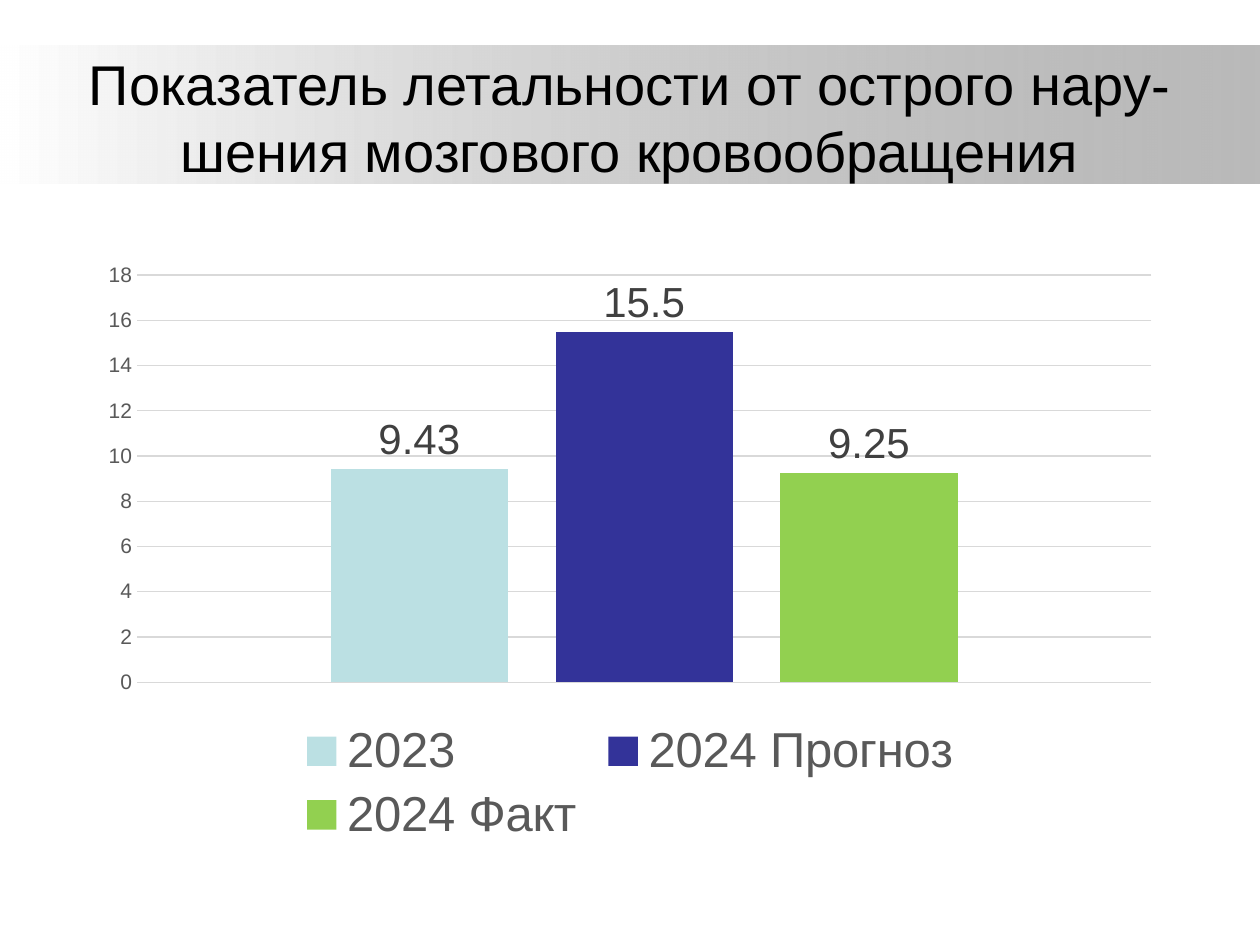
from dataclasses import dataclass

from lxml.etree import SubElement
from pptx import Presentation
from pptx.chart.data import CategoryChartData
from pptx.dml.color import RGBColor
from pptx.enum.chart import XL_CHART_TYPE, XL_LABEL_POSITION, XL_LEGEND_POSITION, XL_TICK_MARK
from pptx.enum.shapes import MSO_SHAPE
from pptx.enum.text import MSO_ANCHOR, PP_ALIGN
from pptx.oxml.ns import qn
from pptx.slide import Slide
from pptx.text.text import Font
from pptx.util import Inches, Pt

COLORS = {
    "white": "FFFFFF",
    "band": "808080",
    "title": "000000",
    "axis": "595959",
    "label": "404040",
    "grid": "D9D9D9",
    "previous": "BBE0E3",
    "forecast": "333399",
    "actual": "92D050",
}
TITLE = "Показатель летальности от острого нару-шения мозгового кровообращения"


@dataclass(frozen=True)
class Indicator:
    name: str
    value: float
    color: str


INDICATORS = [
    Indicator("2023", 9.43, "previous"),
    Indicator("2024 Прогноз", 15.5, "forecast"),
    Indicator("2024 Факт", 9.25, "actual"),
]


def rgb(name: str) -> RGBColor:
    return RGBColor.from_string(COLORS[name])


def style_font(font: Font, size: int, color: str) -> None:
    font.name = "Arial"
    font.size = Pt(size)
    font.color.rgb = rgb(color)


def add_title_band(slide: Slide) -> None:
    band = slide.shapes.add_shape(
        MSO_SHAPE.RECTANGLE, Inches(0), Inches(0.36), Inches(10), Inches(1.1)
    )
    band.shadow.inherit = False
    band.line.fill.background()
    band.fill.gradient()
    band.fill.gradient_angle = 0
    for stop, color in zip(band.fill.gradient_stops, ("white", "band")):
        stop.color.rgb = rgb(color)
    end_color = list(band.element.spPr.iter(qn("a:srgbClr")))[-1]
    SubElement(end_color, qn("a:alpha")).set("val", "54000")


def add_title(slide: Slide) -> None:
    title = slide.shapes.add_textbox(Inches(0.5), Inches(0.3), Inches(9), Inches(1.25))
    frame = title.text_frame
    frame.word_wrap = True
    frame.vertical_anchor = MSO_ANCHOR.MIDDLE
    paragraph = frame.paragraphs[0]
    paragraph.alignment = PP_ALIGN.CENTER
    run = paragraph.add_run()
    run.text = TITLE
    style_font(run.font, 32, "title")


def add_mortality_chart(slide: Slide, indicators: list[Indicator]) -> None:
    data = CategoryChartData()
    data.categories = ["1"]
    for indicator in indicators:
        data.add_series(indicator.name, [indicator.value])
    chart = slide.shapes.add_chart(
        XL_CHART_TYPE.COLUMN_CLUSTERED,
        Inches(0.69), Inches(2), Inches(8.62), Inches(4.76), data,
    ).chart
    style_font(chart.font, 10, "title")
    chart.has_title = False
    chart.has_legend = True
    chart.legend.position = XL_LEGEND_POSITION.BOTTOM
    chart.legend.include_in_layout = False
    style_font(chart.legend.font, 28, "axis")

    chart.category_axis.visible = False
    axis = chart.value_axis
    axis.major_tick_mark = XL_TICK_MARK.NONE
    axis.minor_tick_mark = XL_TICK_MARK.NONE
    axis.format.line.fill.background()
    style_font(axis.tick_labels.font, 12, "axis")
    axis.major_gridlines.format.line.color.rgb = rgb("grid")
    axis.major_gridlines.format.line.width = Pt(0.75)

    plot = chart.plots[0]
    plot.vary_by_categories = False
    plot.gap_width = 219
    plot.overlap = -27
    for series, indicator in zip(plot.series, indicators):
        series.format.fill.solid()
        series.format.fill.fore_color.rgb = rgb(indicator.color)
        labels = series.data_labels
        labels.show_value = True
        labels.position = XL_LABEL_POSITION.OUTSIDE_END
        style_font(labels.font, 24, "label")


def main() -> None:
    """Build the stroke mortality slide and save it."""
    presentation = Presentation()
    presentation.slide_width = Inches(10)
    presentation.slide_height = Inches(7.5)
    slide = presentation.slides.add_slide(presentation.slide_layouts[6])
    slide.background.fill.solid()
    slide.background.fill.fore_color.rgb = rgb("white")
    add_title_band(slide)
    add_title(slide)
    add_mortality_chart(slide, INDICATORS)
    presentation.save("out.pptx")


if __name__ == "__main__":
    main()
